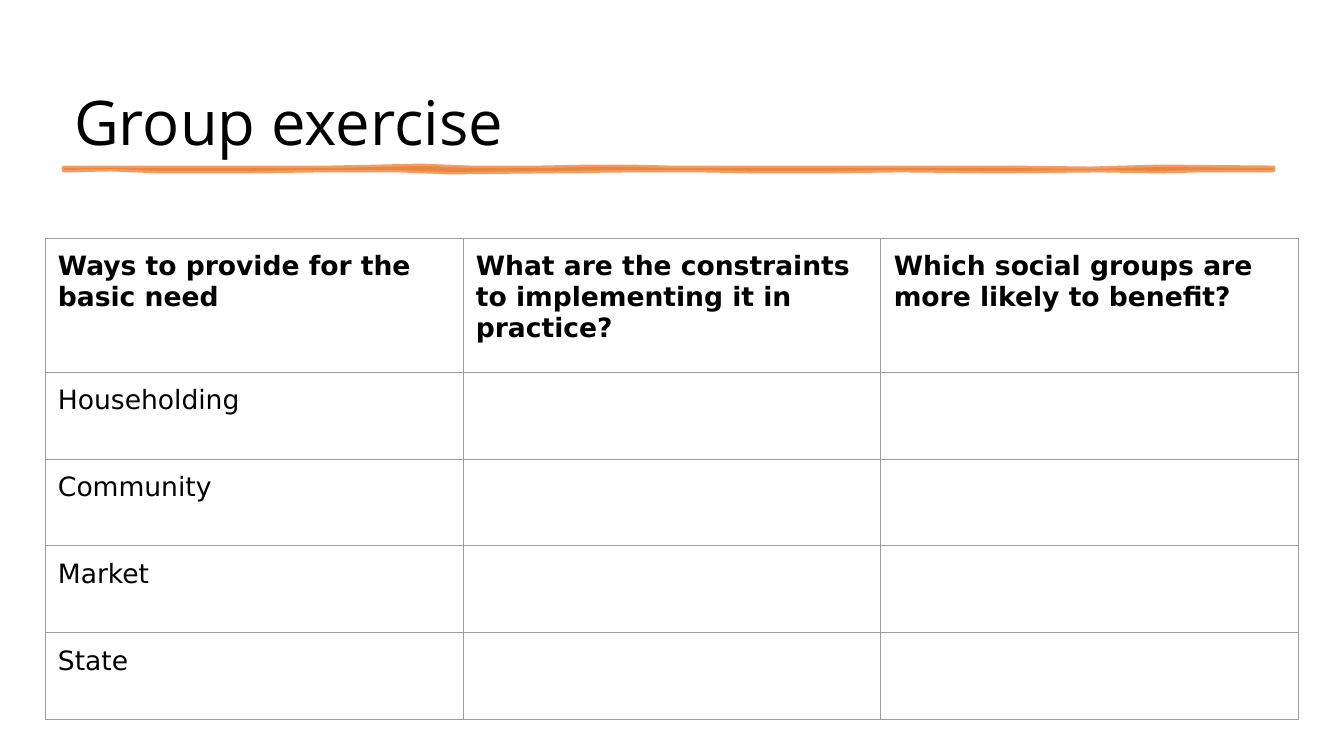
import pptx
import pptx.util
import pptx.dml.color
import pptx.enum.text
import pptx.oxml
import pptx.oxml.ns

BLACK = pptx.dml.color.RGBColor(0x00, 0x00, 0x00)
ORANGE = pptx.dml.color.RGBColor(0xED, 0x7D, 0x31)
GREY = pptx.dml.color.RGBColor(0x9E, 0x9E, 0x9E)
PX = 914400 / 100.8
NS = pptx.oxml.ns.nsdecls("a")


def px(n):
    return pptx.util.Emu(round(n * PX))


def style(run, name, size, bold):
    looks = {"name": name, "size": pptx.util.Pt(size), "bold": bold}
    for key, value in looks.items():
        setattr(run.font, key, value)
    run.font.color.rgb = BLACK


deck = pptx.Presentation()
deck.slide_width = px(1344)
deck.slide_height = px(756)
slide = deck.slides.add_slide(deck.slide_layouts[5])

title = slide.shapes.title
place = {"left": 64, "top": 6, "width": 1214, "height": 158}
for key, value in place.items():
    setattr(title, key, px(value))
frame = title.text_frame
frame.text = "Group exercise"
frame.auto_size = pptx.enum.text.MSO_AUTO_SIZE.NONE
frame.vertical_anchor = pptx.enum.text.MSO_ANCHOR.BOTTOM
line = frame.paragraphs[0]
line.alignment = pptx.enum.text.PP_ALIGN.LEFT
line.line_spacing = 0.9
style(line.runs[0], "Open Sans", 44, False)

upper = [(64, 168), (130, 168), (240, 168), (330, 168), (380, 167),
         (420, 166), (470, 168), (540, 168), (590, 167), (630, 167),
         (670, 168), (780, 168), (870, 168), (960, 168), (1010, 168),
         (1090, 169), (1160, 167), (1273, 168)]
lower = [(1273, 170), (1200, 170), (1160, 171), (1100, 170), (1000, 171),
         (900, 170), (820, 171), (760, 171), (700, 170), (630, 170),
         (540, 171), (450, 172), (400, 170), (320, 170), (240, 171),
         (160, 171), (110, 169), (64, 170)]
build = slide.shapes.build_freeform(*upper[0], scale=PX)
build.add_line_segments(upper[1:] + lower, close=True)
stroke = build.convert_to_shape()
stroke.shadow.inherit = False
stroke.fill.solid()
stroke.line.width = pptx.util.Pt(3.5)
for fill in (stroke.fill, stroke.line.fill):
    fill.solid()
    fill.fore_color.rgb = ORANGE
for tint in stroke.element.spPr.iter(pptx.oxml.ns.qn("a:srgbClr")):
    tint.append(pptx.oxml.parse_xml(f'<a:alpha {NS} val="75000"/>'))
stroke.line._get_or_add_ln().append(pptx.oxml.parse_xml(f"<a:round {NS}/>"))

heads = ["Ways to provide for the basic need",
         "What are the constraints to implementing it in practice?",
         "Which social groups are more likely to benefit?"]
ways = ["Householding", "Community", "Market", "State"]
rows = [heads] + [[way, "", ""] for way in ways]
table = slide.shapes.add_table(
    len(rows), len(heads), px(45), px(238), px(1254), px(482)).table
table.first_row = False
table.horz_banding = False
for col in table.columns:
    col.width = px(418)
for r, words in enumerate(rows):
    table.rows[r].height = px(87 if r else 134)
    for c, text in enumerate(words):
        cell = table.cell(r, c)
        for side in ("left", "right", "top", "bottom"):
            setattr(cell, f"margin_{side}", px(13))
        cell.fill.background()
        props = cell._tc.get_or_add_tcPr()
        for i, edge in enumerate("LRTB"):
            props.insert(i, pptx.oxml.parse_xml(
                f'<a:ln{edge} {NS} w="9525"><a:solidFill>'
                f'<a:srgbClr val="{GREY}"/></a:solidFill></a:ln{edge}>'))
        if text:
            cell.text = text
            style(cell.text_frame.paragraphs[0].runs[0],
                  "DejaVu Sans", 19, r == 0)

deck.save("out.pptx")
